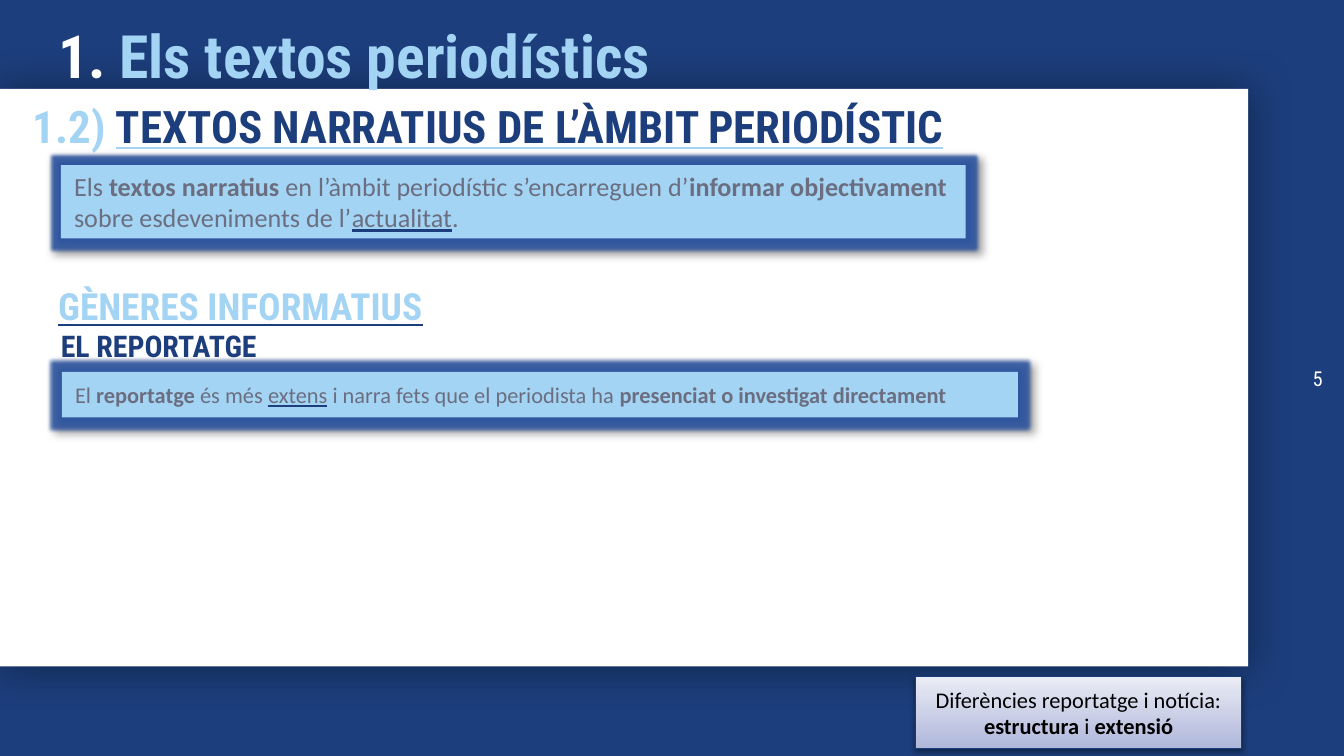
from lxml import etree
from pptx import Presentation
from pptx.dml.color import RGBColor
from pptx.enum.shapes import MSO_SHAPE
from pptx.enum.text import MSO_ANCHOR, PP_ALIGN
from pptx.oxml import parse_xml
from pptx.oxml.ns import nsdecls, qn
from pptx.util import Cm, Pt

RECT = MSO_SHAPE.RECTANGLE
TOP, MIDDLE = MSO_ANCHOR.TOP, MSO_ANCHOR.MIDDLE
LEFT, CENTER, RIGHT = PP_ALIGN.LEFT, PP_ALIGN.CENTER, PP_ALIGN.RIGHT

THEME = {
    "navy": "1D3E7C", "sky": "A3D4F3", "white": "FFFFFF", "grey": "6B6E81",
    "black": "000000", "glow": "2E559F", "panel_shadow": "010E1B",
    "note_line": "1A3C7C", "note_stops": ("AFB7DA", "EAECF5"),
    "head": "Roboto Condensed", "body": "Calibri",
    "title": 32, "section": 24, "genre": 20, "subgenre": 16,
    "lead": 14, "text": 12, "number": 11,
}

BOLD = {"bold": True}
NAVY_LINE = {"underline": True, "line": "navy"}

# position, size, colour, alignment, anchor and runs of each heading
HEADINGS = [
    ((1.1, 0.36, 21.49, 1.14), "title", "sky", LEFT, TOP,
     [("1. ", {"bold": True, "color": "white"}), ("Els textos periodístics", BOLD)]),
    ((23.48, 0, 1.52, 14.29), "number", "white", RIGHT, MIDDLE, [("5", {})]),
    ((0.62, 1.87, 21.49, 1.14), "section", "navy", LEFT, TOP,
     [("1.2) ", {"bold": True, "color": "sky"}),
      ("TEXTOS NARRATIUS DE L’ÀMBIT PERIODÍSTIC",
       {"bold": True, "underline": True, "line": "sky"})]),
    ((1.1, 5.36, 21.49, 1.14), "genre", "sky", LEFT, TOP,
     [("GÈNERES INFORMATIUS", BOLD | NAVY_LINE)]),
    ((1.15, 6.2, 21.49, 0.86), "subgenre", "navy", LEFT, TOP,
     [("EL REPORTATGE", BOLD)]),
]

DEFINITIONS = [
    ((1.15, 3.12, 17.1, 1.39), "lead",
     [("Els ", {}), ("textos narratius", BOLD),
      (" en l’àmbit periodístic s’encarreguen d’", {}),
      ("informar objectivament", BOLD), (" sobre esdeveniments de l’", {}),
      ("actualitat", NAVY_LINE), (".", {})]),
    ((1.17, 7.03, 18.07, 0.86), "text",
     [("El ", {}), ("reportatge", BOLD), (" és més ", {}), ("extens", NAVY_LINE),
      (" i narra fets que el periodista ha ", {}),
      ("presenciat o investigat directament", BOLD)]),
]

PANEL = (0, 1.68, 23.59, 10.92)
NOTE = ((17.3, 12.79, 6.17, 1.36),
        [("Diferències reportatge i notícia: ", {}), ("estructura", BOLD),
         (" i ", {}), ("extensió", BOLD)])


def rgb(name):
    return RGBColor.from_string(THEME[name])


def write(sp, runs, size, color, font, align=LEFT, anchor=MIDDLE):
    tf = sp.text_frame
    tf.word_wrap, tf.vertical_anchor = True, anchor
    p = tf.paragraphs[0]
    p.alignment = align
    for text, fmt in runs:
        r = p.add_run()
        r.text = text
        r.font.color.rgb = rgb(fmt.get("color", color))
        if "line" in fmt:
            u = etree.SubElement(r.font._element, qn("a:uFill"))
            fill = etree.SubElement(u, qn("a:solidFill"))
            etree.SubElement(fill, qn("a:srgbClr"), val=THEME[fmt["line"]])
        values = {"size": Pt(THEME[size]), "name": THEME[font], "bold": False}
        values |= {k: v for k, v in fmt.items() if k in ("bold", "underline")}
        for name, value in values.items():
            setattr(r.font, name, value)


def add_heading(s, box, size, color, align, anchor, runs):
    sp = s.shapes.add_textbox(*map(Cm, box))
    for side in ("left", "top", "right", "bottom"):
        setattr(sp.text_frame, f"margin_{side}", 0)
    write(sp, runs, size, color, "head", align, anchor)


def add_box(s, box, fill, shadow, glow=0):
    sp = s.shapes.add_shape(RECT, *map(Cm, box))
    sp.fill.solid()
    sp.fill.fore_color.rgb = rgb(fill)
    sp.line.fill.background()
    color, alpha, blur, dist, angle = shadow
    halo = (f'<a:glow rad="{Pt(glow)}"><a:srgbClr val="{THEME["glow"]}">'
            '<a:alpha val="90000"/></a:srgbClr></a:glow>') if glow else ""
    sp._element.spPr.append(parse_xml(
        f'<a:effectLst {nsdecls("a")}>{halo}<a:outerShdw blurRad="{Pt(blur)}" '
        f'dist="{Pt(dist)}" dir="{angle * 60000}" algn="tl" rotWithShape="0">'
        f'<a:srgbClr val="{THEME[color]}"><a:alpha val="{alpha * 1000}"/>'
        '</a:srgbClr></a:outerShdw></a:effectLst>'))
    return sp


def add_note(s, box, runs):
    sp = add_box(s, box, "white", ("black", 38, 3.1, 1.6, 90))
    sp.fill.gradient()
    sp.fill.gradient_angle = 90
    for stop, color in zip(sp.fill.gradient_stops, THEME["note_stops"]):
        stop.color.rgb = RGBColor.from_string(color)
    sp.line.color.rgb = rgb("note_line")
    sp.line.width = Pt(0.75)
    write(sp, runs, "text", "black", "body", CENTER)


def main():
    """Build the slide on informative genres and save it."""
    prs = Presentation()
    prs.slide_width, prs.slide_height = Cm(25.4), Cm(14.29)
    s = prs.slides.add_slide(prs.slide_layouts[6])
    s.background.fill.solid()
    s.background.fill.fore_color.rgb = rgb("navy")
    add_box(s, PANEL, "white", ("panel_shadow", 50, 22.5, 0.8, 90))
    for box, size, runs in DEFINITIONS:
        sp = add_box(s, box, "sky", ("black", 40, 4, 3, 45), glow=4)
        write(sp, runs, size, "grey", "body")
    for heading in HEADINGS:
        add_heading(s, *heading)
    add_note(s, *NOTE)
    prs.save("out.pptx")


if __name__ == "__main__":
    main()
